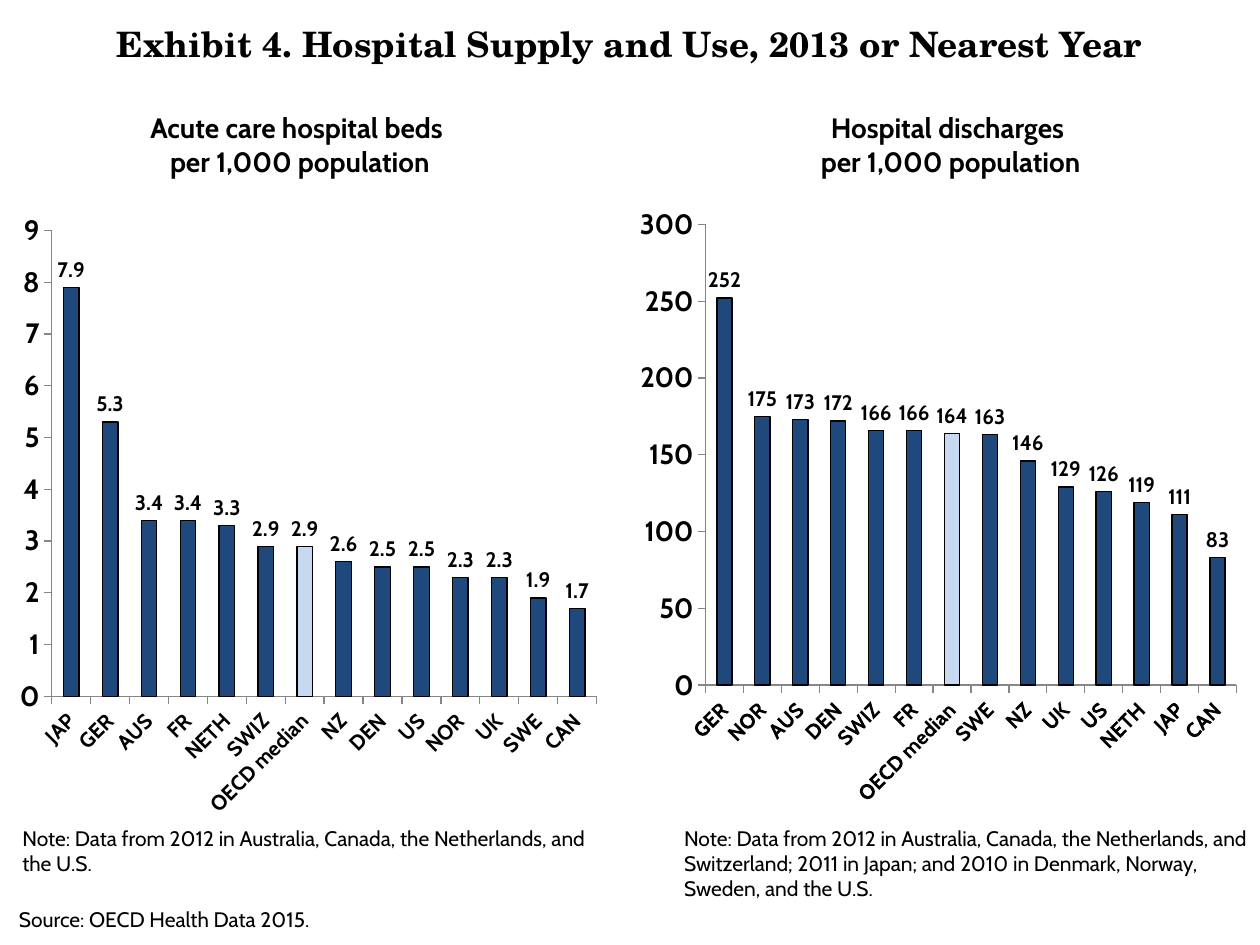
from lxml.etree import SubElement
from pptx import Presentation
from pptx.chart.data import CategoryChartData
from pptx.dml.color import RGBColor
from pptx.enum.chart import XL_CHART_TYPE as ChartType
from pptx.enum.chart import XL_LABEL_POSITION as LabelPosition
from pptx.enum.chart import XL_TICK_MARK as TickMark
from pptx.enum.text import MSO_ANCHOR as Anchor
from pptx.enum.text import MSO_AUTO_SIZE as AutoSize
from pptx.enum.text import PP_ALIGN as Align
from pptx.oxml.ns import qn
from pptx.util import Cm, Pt

COLORS = {"text": "000000", "bar": "1F497D", "median": "C6D9F1", "axis": "868686"}
BODY_FONT = "Cabin"
TITLE_FONT = "TeX Gyre Schola"
MEDIAN = "OECD median"

BEDS = {
    "JAP": 7.9, "GER": 5.3, "AUS": 3.4, "FR": 3.4, "NETH": 3.3, "SWIZ": 2.9, MEDIAN: 2.9,
    "NZ": 2.6, "DEN": 2.5, "US": 2.5, "NOR": 2.3, "UK": 2.3, "SWE": 1.9, "CAN": 1.7,
}
DISCHARGES = {
    "GER": 252, "NOR": 175, "AUS": 173, "DEN": 172, "SWIZ": 166, "FR": 166, MEDIAN: 164,
    "SWE": 163, "NZ": 146, "UK": 129, "US": 126, "NETH": 119, "JAP": 111, "CAN": 83,
}


def color(name):
    """Return the named colour from the palette."""
    return RGBColor.from_string(COLORS[name])


def style_font(font, size, bold=False, name=BODY_FONT):
    """Set the face, size, weight and colour of a font."""
    font.name = name
    font.size = Pt(size)
    font.bold = bold
    font.color.rgb = color("text")


def add_text(slide, text, box, size=12, bold=False, name=BODY_FONT,
             align=Align.LEFT, anchor=Anchor.TOP, grow=True):
    """Add a wrapped text box; box is left, top, width, height in cm."""
    shape = slide.shapes.add_textbox(*map(Cm, box))
    frame = shape.text_frame
    frame.word_wrap = True
    frame.auto_size = AutoSize.SHAPE_TO_FIT_TEXT if grow else AutoSize.NONE
    frame.vertical_anchor = anchor
    paragraph = frame.paragraphs[0]
    paragraph.text = text
    paragraph.alignment = align
    for run in paragraph.runs:
        style_font(run.font, size, bold, name)


def style_axis(axis, size):
    """Give an axis outside ticks, a grey line and bold labels."""
    axis.has_major_gridlines = False
    axis.major_tick_mark = TickMark.OUTSIDE
    axis.minor_tick_mark = TickMark.NONE
    axis.format.line.color.rgb = color("axis")
    axis.format.line.width = Pt(0.75)
    style_font(axis.tick_labels.font, size, bold=True)


def set_plot_layout(chart, layout):
    """Fix the inner plot area as fractions x, y, w, h of the chart."""
    plot_area = chart._chartSpace.find(".//" + qn("c:plotArea"))
    for old in plot_area.findall(qn("c:layout")):
        plot_area.remove(old)
    outer = plot_area.makeelement(qn("c:layout"))
    plot_area.insert(0, outer)
    manual = SubElement(outer, qn("c:manualLayout"))
    settings = {"layoutTarget": "inner", "xMode": "edge", "yMode": "edge"}
    settings.update(zip("xywh", map(str, layout)))
    for tag, value in settings.items():
        SubElement(manual, qn("c:" + tag)).set("val", value)


def add_bar_chart(slide, values, box, layout, maximum, step, number_format):
    """Add a column chart with the median column highlighted."""
    data = CategoryChartData(number_format=number_format)
    data.categories = list(values)
    data.add_series("Series 1", list(values.values()))
    chart = slide.shapes.add_chart(ChartType.COLUMN_CLUSTERED, *map(Cm, box), data).chart
    chart.has_legend = False
    chart.has_title = False
    style_font(chart.font, 18, name="Calibri")

    style_axis(chart.category_axis, 12)
    label_body = chart.category_axis._element.find(qn("c:txPr")).find(qn("a:bodyPr"))
    label_body.set("rot", "-2700000")
    value_axis = chart.value_axis
    style_axis(value_axis, 16)
    value_axis.minimum_scale = 0
    value_axis.maximum_scale = maximum
    value_axis.major_unit = step
    value_axis.tick_labels.number_format = "General"
    value_axis.tick_labels.number_format_is_linked = False

    plot = chart.plots[0]
    plot.gap_width = 150
    plot.vary_by_categories = False
    series = plot.series[0]
    series.invert_if_negative = False
    median_point = series.points[list(values).index(MEDIAN)]
    for item, fill in ((series, "bar"), (median_point, "median")):
        item.format.fill.solid()
        item.format.fill.fore_color.rgb = color(fill)
        item.format.line.color.rgb = color("text")
        item.format.line.width = Pt(0.75)

    labels = series.data_labels
    labels.show_value = True
    labels.position = LabelPosition.OUTSIDE_END
    labels.number_format = number_format
    labels.number_format_is_linked = False
    style_font(labels.font, 12, bold=True)
    set_plot_layout(chart, layout)


def main():
    """Build the hospital supply and use slide."""
    presentation = Presentation()
    presentation.slide_width, presentation.slide_height = Cm(25.4), Cm(19.05)
    slide = presentation.slides.add_slide(presentation.slide_layouts[6])

    add_text(slide, "Exhibit 4. Hospital Supply and Use, 2013 or Nearest Year",
             (0, 0.25, 25.4, 1.27), size=20, bold=True, name=TITLE_FONT,
             align=Align.CENTER, anchor=Anchor.MIDDLE, grow=False)

    heading = {"size": 16, "bold": True, "align": Align.CENTER}
    add_bar_chart(slide, BEDS, (0.2, 4.01, 12.07, 12.7), (0.07, 0.05, 0.91, 0.74),
                  maximum=9, step=1, number_format="#,##0.0")
    add_text(slide, "Acute care hospital beds \vper 1,000 population",
             (0.43, 2.11, 11.23, 1.63), **heading)
    add_text(slide, "Note: Data from 2012 in Australia, Canada, the Netherlands, and the U.S.",
             (0.2, 16.51, 12.07, 1.27))

    add_bar_chart(slide, DISCHARGES, (12.9, 4.01, 12.27, 12.9), (0.1, 0.04, 0.88, 0.72),
                  maximum=300, step=50, number_format="#,##0")
    add_text(slide, "Hospital discharges \vper 1,000 population",
             (13.13, 2.11, 12.07, 1.63), **heading)
    add_text(slide, "Note: Data from 2012 in Australia, Canada, the Netherlands, and Switzerland; "
             "2011 in Japan; and 2010 in Denmark, Norway, Sweden, and the U.S.",
             (13.54, 16.51, 11.86, 1.8))

    add_text(slide, "Source: OECD Health Data 2015.", (0.13, 18.16, 12.27, 0.76))
    presentation.save("out.pptx")


if __name__ == "__main__":
    main()
